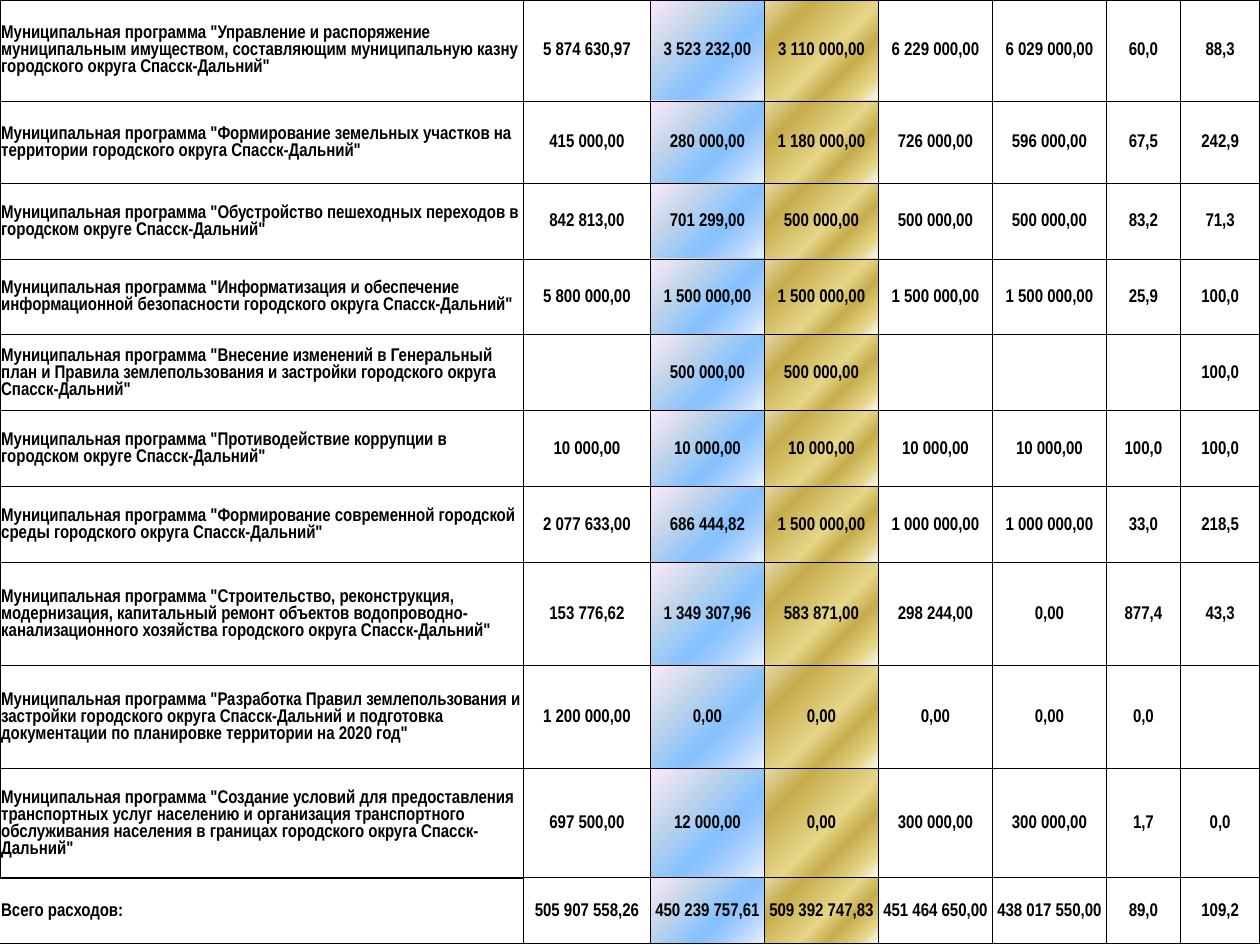
from dataclasses import dataclass

from lxml import etree
from pptx import Presentation
from pptx import util as u
from pptx.dml import color
from pptx.enum import text
from pptx.oxml import ns


@dataclass(frozen=True)
class Theme:
    font: str = "Arial Narrow"
    size: float = 10.5
    ink: str = "000000"
    paper: str = "FFFFFF"
    thin: float = 0.5
    thick: float = 1
    inset: float = 0.72
    blue: tuple = ((0, "5E9EFF", 9), (40, "85C2FF", 100),
                   (70, "C4D6EB", 100), (100, "FFEBFA", 100))
    gold: tuple = ((0, "E6DCAC", 8), (12, "E6D78A", 100),
                   (30, "C7AC4C", 100), (45, "E6D78A", 100),
                   (77, "C7AC4C", 100), (100, "E6DCAC", 100))


WIDTHS = [299.1, 72.6, 65.15, 65.15, 65.15, 65.15, 42.3, 45.4]
HEIGHTS = [57.7, 47.4, 42.9] + [43.4] * 4 + [58.9, 58.9, 62.3, 37.7]
CLEAR = {(row, col) for row in (2, 3, 6) for col in (4, 5)}

PLANS = [
    ("Управление и распоряжение муниципальным имуществом, составляющим "
     "муниципальную казну городского округа Спасск-Дальний",
     "5 874 630,97|3 523 232,00|3 110 000,00|6 229 000,00|6 029 000,00|60,0|88,3"),
    ("Формирование земельных участков на территории городского округа "
     "Спасск-Дальний",
     "415 000,00|280 000,00|1 180 000,00|726 000,00|596 000,00|67,5|242,9"),
    ("Обустройство пешеходных переходов в городском округе Спасск-Дальний",
     "842 813,00|701 299,00|500 000,00|500 000,00|500 000,00|83,2|71,3"),
    ("Информатизация и обеспечение информационной безопасности городского "
     "округа Спасск-Дальний",
     "5 800 000,00|1 500 000,00|1 500 000,00|1 500 000,00|1 500 000,00|25,9|100,0"),
    ("Внесение изменений в Генеральный план и Правила землепользования и "
     "застройки городского округа Спасск-Дальний",
     "|500 000,00|500 000,00||||100,0"),
    ("Противодействие коррупции в городском округе Спасск-Дальний",
     "10 000,00|10 000,00|10 000,00|10 000,00|10 000,00|100,0|100,0"),
    ("Формирование современной городской среды городского округа "
     "Спасск-Дальний",
     "2 077 633,00|686 444,82|1 500 000,00|1 000 000,00|1 000 000,00|33,0|218,5"),
    ("Строительство, реконструкция, модернизация, капитальный ремонт объектов "
     "водопроводно-канализационного хозяйства городского округа Спасск-Дальний",
     "153 776,62|1 349 307,96|583 871,00|298 244,00|0,00|877,4|43,3"),
    ("Разработка Правил землепользования и застройки городского округа "
     "Спасск-Дальний и подготовка документации по планировке территории "
     "на 2020 год",
     "1 200 000,00|0,00|0,00|0,00|0,00|0,0|"),
    ("Создание условий для предоставления транспортных услуг населению и "
     "организация транспортного обслуживания населения в границах городского "
     "округа Спасск-Дальний",
     "697 500,00|12 000,00|0,00|300 000,00|300 000,00|1,7|0,0"),
]
TOTAL = ("505 907 558,26|450 239 757,61|509 392 747,83|451 464 650,00|"
         "438 017 550,00|89,0|109,2")


def write(frame, words, font, size, ink, bold=True, align=None):
    para = frame.paragraphs[0]
    para.alignment = align
    run = para.add_run()
    run.text = words
    run.font.name = font
    run.font.size = u.Pt(size)
    run.font.bold = bold
    run.font.color.rgb = color.RGBColor.from_string(ink)


def node(parent, tag, **attrs):
    return etree.SubElement(parent, ns.qn("a:" + tag),
                            {key: str(val) for key, val in attrs.items()})


class Deck:
    def __init__(self, theme):
        self.theme = theme
        self.show = Presentation()
        self.show.slide_width = u.Pt(720)
        self.show.slide_height = u.Pt(540)
        self.slide = self.show.slides.add_slide(self.show.slide_layouts[6])

    def border(self, cell, edges):
        props = cell._tc.get_or_add_tcPr()
        for side in "LRTB":
            width = edges[side]
            line = node(props, "ln" + side, w=u.Pt(width))
            if width:
                fill = node(line, "solidFill")
                node(fill, "srgbClr", val=self.theme.ink)
            else:
                node(line, "noFill")

    def blend(self, cell, stops):
        fill = node(cell._tc.get_or_add_tcPr(), "gradFill", rotWithShape=1)
        chain = node(fill, "gsLst")
        for place, tone, alpha in stops:
            stop = node(chain, "gs", pos=place * 1000)
            tint = node(stop, "srgbClr", val=tone)
            if alpha < 100:
                node(tint, "alpha", val=alpha * 1000)
        route = node(fill, "path", path="circle")
        node(route, "fillToRect", l=100000, t=100000)

    def paint(self, cell, fill):
        if fill is None:
            cell.fill.background()
        elif isinstance(fill, tuple):
            self.blend(cell, fill)
        else:
            cell.fill.solid()
            cell.fill.fore_color.rgb = color.RGBColor.from_string(fill)

    def cell(self, cell, words, fill, edges, align):
        look = self.theme
        self.border(cell, edges)
        self.paint(cell, fill)
        if words:
            cell.vertical_anchor = text.MSO_ANCHOR.MIDDLE
            cell.margin_left = cell.margin_right = u.Pt(look.inset)
            cell.margin_top, cell.margin_bottom = u.Pt(look.inset), 0
            write(cell.text_frame, words, font=look.font, size=look.size,
                  ink=look.ink, align=align)

    def table(self, rows, widths, heights):
        look = self.theme
        grid = self.slide.shapes.add_table(
            len(rows), len(widths), 0, 0,
            u.Pt(sum(widths)), u.Pt(sum(heights))).table
        grid.first_row = grid.horz_banding = False
        for col, width in zip(grid.columns, widths):
            col.width = u.Pt(width)
        for row, height in zip(grid.rows, heights):
            row.height = u.Pt(height)
        last = len(rows) - 1
        fills = {2: look.blue, 3: look.gold}
        for r, row in enumerate(rows):
            for c, words in enumerate(row):
                edges = dict.fromkeys("LRTB", look.thin)
                if (r == last and c < 6) or (r == last - 1 and c == 0):
                    edges["B"] = look.thick
                if r == last and c == 0:
                    edges.update(L=0, T=look.thick)
                fill = None if (r, c) in CLEAR else fills.get(c, look.paper)
                align = text.PP_ALIGN.CENTER if c else text.PP_ALIGN.LEFT
                self.cell(grid.cell(r, c), words, fill, edges, align)


def main():
    rows = [[f'Муниципальная программа "{name}"', *sums.split("|")]
            for name, sums in PLANS]
    rows.append(["Всего расходов:", *TOTAL.split("|")])
    deck = Deck(Theme())
    deck.table(rows, WIDTHS, HEIGHTS)
    deck.show.save("out.pptx")


if __name__ == "__main__":
    main()
